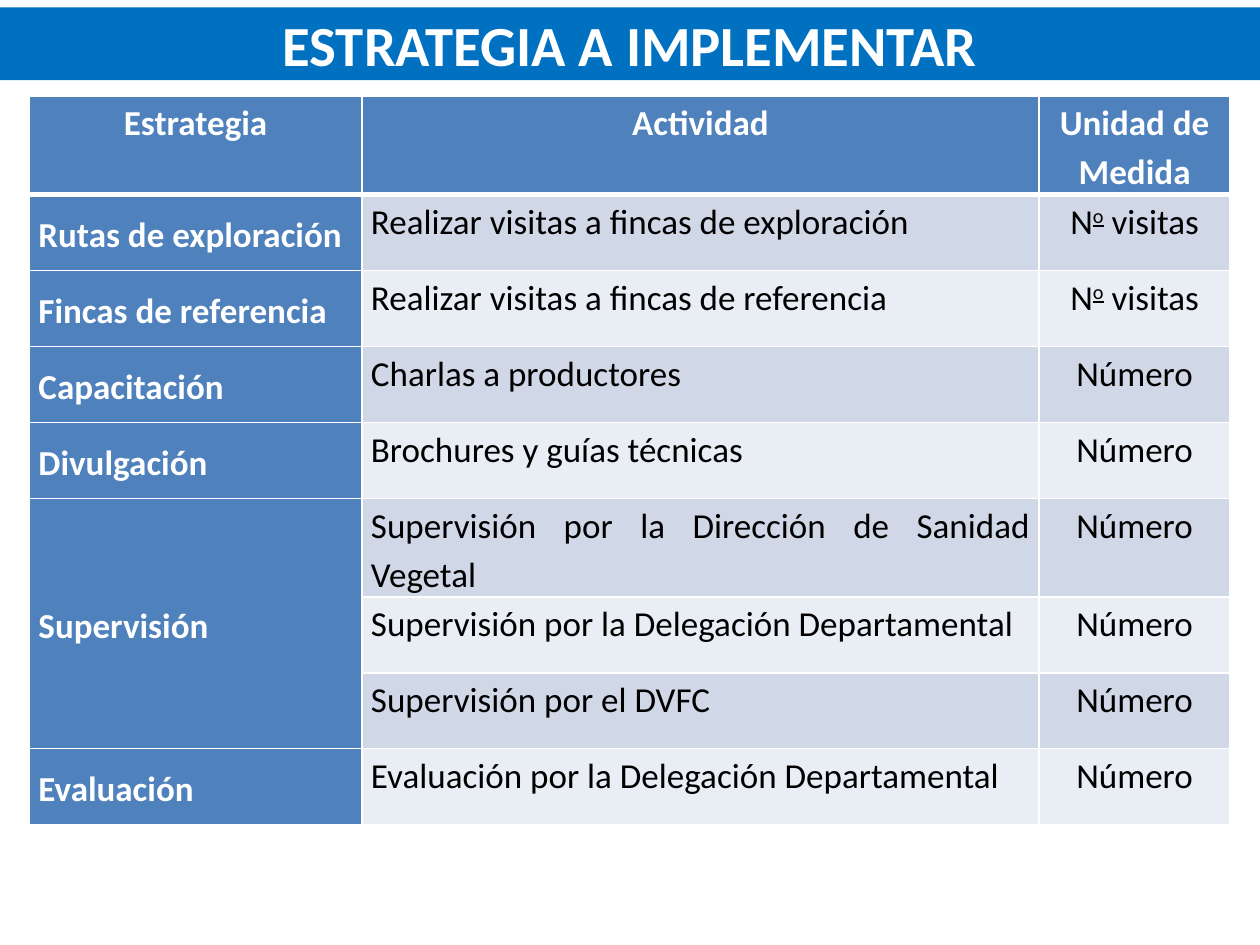
"""Build the strategy slide: a title band above a table of activities."""
from typing import NamedTuple

from lxml.etree import SubElement
from pptx import Presentation
from pptx.dml.color import RGBColor
from pptx.enum.text import MSO_ANCHOR, MSO_AUTO_SIZE, PP_ALIGN
from pptx.oxml.ns import qn
from pptx.util import Pt

FONT = "Calibri"
WHITE, BLACK = "FFFFFF", "000000"
BAND, ACCENT = "0070C0", "4F81BD"
STRIPES = ("D0D8E8", "E9EDF4")
COL_WIDTHS = (190, 387, 109.2)
ROW_HEIGHT = 43.4


class Row(NamedTuple):
    strategy: str
    activity: str
    unit: str


class CellStyle(NamedTuple):
    fill: str
    color: str
    bold: bool
    align: PP_ALIGN
    anchor: MSO_ANCHOR


HEADER = Row("Estrategia", "Actividad", "Unidad de Medida")
ROWS = (
    Row("Rutas de exploración", "Realizar visitas a fincas de exploración", "No visitas"),
    Row("Fincas de referencia", "Realizar visitas a fincas de referencia", "No visitas"),
    Row("Capacitación", "Charlas a productores", "Número"),
    Row("Divulgación", "Brochures y guías técnicas", "Número"),
    Row("Supervisión", "Supervisión por la Dirección de Sanidad Vegetal", "Número"),
    Row("", "Supervisión por la Delegación Departamental", "Número"),
    Row("", "Supervisión por el DVFC", "Número"),
    Row("Evaluación", "Evaluación por la Delegación Departamental", "Número"),
)


def rgb(value: str) -> RGBColor:
    return RGBColor.from_string(value)


def set_font(font, size: float, color: str, bold: bool) -> None:
    font.name, font.size, font.bold = FONT, Pt(size), bold
    font.color.rgb = rgb(color)


def add_title(s) -> None:
    sp = s.shapes.title
    sp.left, sp.top, sp.width, sp.height = Pt(0), Pt(4.2), Pt(720), Pt(41.6)
    sp.fill.solid()
    sp.fill.fore_color.rgb = rgb(BAND)
    tf = sp.text_frame
    tf.text = "ESTRATEGIA A IMPLEMENTAR"
    tf.auto_size = MSO_AUTO_SIZE.NONE
    tf.vertical_anchor = MSO_ANCHOR.MIDDLE
    p = tf.paragraphs[0]
    p.alignment = PP_ALIGN.CENTER
    set_font(p.font, 32.4, WHITE, True)


def set_borders(cell, top: float, bottom: float) -> None:
    tc_pr = cell._tc.get_or_add_tcPr()
    for side, width in (("L", 1), ("R", 1), ("T", top), ("B", bottom)):
        ln = SubElement(tc_pr, qn(f"a:ln{side}"), w=str(Pt(width)))
        fill = SubElement(ln, qn("a:solidFill"))
        SubElement(fill, qn("a:srgbClr"), val=WHITE)


def add_text(p, text: str) -> None:
    if not text.startswith("No "):
        p.add_run().text = text
        return
    for part in ("N", "o", text[2:]):
        r = p.add_run()
        r.text = part
        if part == "o":
            r.font.underline = True
            r._r.get_or_add_rPr().set("baseline", "30000")


def cell_style(row: int, col: int) -> CellStyle:
    if row == 0:
        return CellStyle(ACCENT, WHITE, True, PP_ALIGN.CENTER, MSO_ANCHOR.TOP)
    if col == 0:
        return CellStyle(ACCENT, WHITE, True, PP_ALIGN.JUSTIFY, MSO_ANCHOR.MIDDLE)
    align = PP_ALIGN.JUSTIFY if col == 1 else PP_ALIGN.CENTER
    return CellStyle(STRIPES[(row - 1) % 2], BLACK, False, align, MSO_ANCHOR.TOP)


def fill_cell(cell, text: str, row: int, style: CellStyle) -> None:
    set_borders(cell, 3 if row == 1 else 1, 3 if row == 0 else 1)
    cell.fill.solid()
    cell.fill.fore_color.rgb = rgb(style.fill)
    cell.margin_left = cell.margin_right = Pt(5.2)
    cell.margin_top = cell.margin_bottom = Pt(0)
    cell.vertical_anchor = style.anchor
    p = cell.text_frame.paragraphs[0]
    p.alignment, p.line_spacing = style.align, 1.15
    set_font(p.font, 20, style.color, style.bold)
    if text:
        add_text(p, text)


def add_strategy_table(s) -> None:
    rows = (HEADER, *ROWS)
    table = s.shapes.add_table(
        len(rows), len(COL_WIDTHS), Pt(16.8), Pt(54.8),
        Pt(sum(COL_WIDTHS)), Pt(ROW_HEIGHT * len(rows)),
    ).table
    for column, width in zip(table.columns, COL_WIDTHS):
        column.width = Pt(width)
    for i, row in enumerate(rows):
        table.rows[i].height = Pt(ROW_HEIGHT)
        for j, text in enumerate(row):
            fill_cell(table.cell(i, j), text, i, cell_style(i, j))
    first = next(i for i, row in enumerate(rows) if row.strategy == "Supervisión")
    table.cell(first, 0).merge(table.cell(first + 2, 0))


def main() -> None:
    prs = Presentation()
    prs.slide_width, prs.slide_height = Pt(720), Pt(540)
    s = prs.slides.add_slide(prs.slide_layouts[5])
    add_title(s)
    add_strategy_table(s)
    prs.save("out.pptx")


if __name__ == "__main__":
    main()
